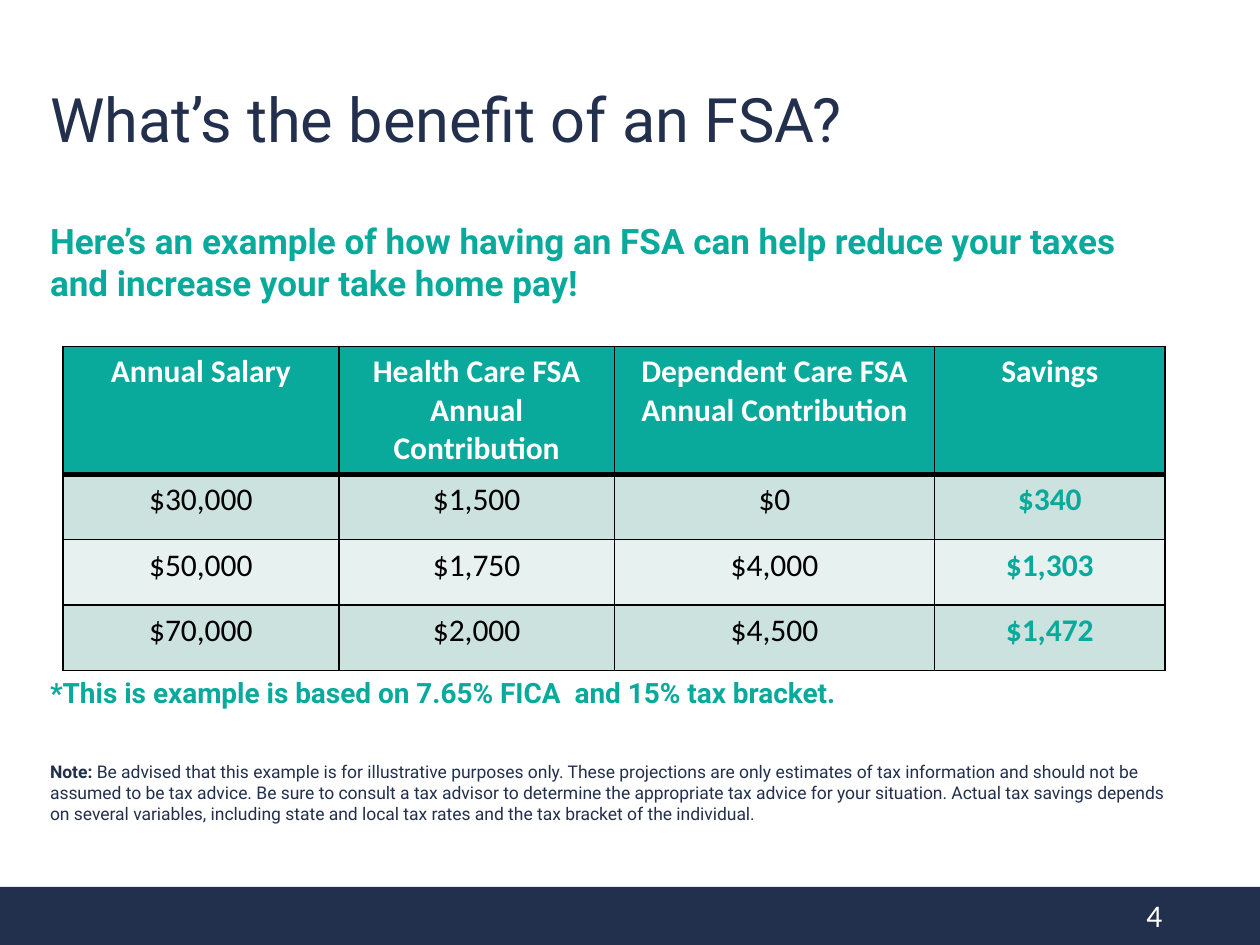
from dataclasses import dataclass

from lxml.etree import SubElement
from pptx import Presentation
from pptx.dml.color import RGBColor
from pptx.enum.shapes import MSO_SHAPE
from pptx.enum.text import PP_ALIGN
from pptx.oxml.ns import qn
from pptx.util import Cm, Pt

COLORS = {
    "navy": "23304D",
    "teal": "09A99C",
    "white": "FFFFFF",
    "black": "000000",
    "band": "CCE2DE",
    "light_band": "E7F1EF",
}


@dataclass(frozen=True)
class Run:
    text: str
    size: float
    color: str
    bold: bool = False
    font: str = "Roboto"


@dataclass(frozen=True)
class TextBlock:
    left: float
    top: float
    width: float
    height: float
    runs: tuple[Run, ...]


TEXT_BLOCKS = (
    TextBlock(0.76, 1.52, 23.32, 1.7, (
        Run("What’s the benefit of an FSA?", 35, "navy"),
    )),
    TextBlock(0.76, 4.3, 23.27, 2, (
        Run("Here’s an example of how having an FSA can help reduce your taxes "
            "and increase your take home pay!", 20, "teal", True),
    )),
    TextBlock(0.76, 13.5, 23.27, 0.95, (
        Run("*This is example is based on 7.65% FICA  and 15% tax bracket.", 16, "teal", True),
    )),
    TextBlock(0.76, 15.22, 23.27, 1.6, (
        Run("Note: ", 10, "navy", True),
        Run("Be advised that this example is for illustrative purposes only. "
            "These projections are only estimates of tax information and should not be "
            "assumed to be tax advice. Be sure to consult a tax advisor to determine the "
            "appropriate tax advice for your situation. Actual tax savings depends on "
            "several variables, including state and local tax rates and the tax bracket "
            "of the individual.", 10, "navy"),
    )),
    TextBlock(22.86, 17.93, 1.27, 1.12, (
        Run("4", 18, "white", font="Calibri"),
    )),
)

SAVINGS_ROWS = (
    ("Annual Salary", "Health Care FSA Annual Contribution",
     "Dependent Care FSA Annual Contribution", "Savings"),
    ("$30,000", "$1,500", "$0", "$340"),
    ("$50,000", "$1,750", "$4,000", "$1,303"),
    ("$70,000", "$2,000", "$4,500", "$1,472"),
)
COLUMN_WIDTHS = (5.56, 5.56, 6.45, 4.65)
ROW_HEIGHTS = (2.58, 1.32, 1.32, 1.32)


def rgb(name: str) -> RGBColor:
    return RGBColor.from_string(COLORS[name])


def add_run(paragraph, run: Run) -> None:
    piece = paragraph.add_run()
    piece.text = run.text
    formats = {"name": run.font, "size": Pt(run.size), "bold": run.bold}
    for attribute, value in formats.items():
        setattr(piece.font, attribute, value)
    piece.font.color.rgb = rgb(run.color)


def add_text(slide, block: TextBlock) -> None:
    box = slide.shapes.add_textbox(
        Cm(block.left), Cm(block.top), Cm(block.width), Cm(block.height))
    box.text_frame.word_wrap = True
    for run in block.runs:
        add_run(box.text_frame.paragraphs[0], run)


def add_footer_bar(slide) -> None:
    bar = slide.shapes.add_shape(MSO_SHAPE.RECTANGLE, 0, Cm(17.88), Cm(25.4), Cm(1.17))
    bar.shadow.inherit = False
    bar.fill.solid()
    bar.fill.fore_color.rgb = rgb("navy")
    bar.line.fill.background()


def set_borders(cell, top: float, bottom: float) -> None:
    properties = cell._tc.get_or_add_tcPr()
    widths = {"lnL": 1, "lnR": 1, "lnT": top, "lnB": bottom}
    for position, (side, width) in enumerate(widths.items()):
        border = SubElement(properties, qn(f"a:{side}"), w=str(Pt(width)))
        fill = SubElement(border, qn("a:solidFill"))
        SubElement(fill, qn("a:srgbClr"), val=COLORS["black"])
        properties.insert(position, border)


def cell_style(row: int, column: int) -> tuple[str, str, bool]:
    if row == 0:
        return "teal", "white", True
    is_savings = column == len(COLUMN_WIDTHS) - 1
    return ("band" if row % 2 else "light_band",
            "teal" if is_savings else "black", is_savings)


def add_savings_table(slide) -> None:
    table = slide.shapes.add_table(
        len(ROW_HEIGHTS), len(COLUMN_WIDTHS), Cm(1.27), Cm(6.98),
        Cm(sum(COLUMN_WIDTHS)), Cm(sum(ROW_HEIGHTS))).table
    for column, width in zip(table.columns, COLUMN_WIDTHS):
        column.width = Cm(width)
    for row, height in zip(table.rows, ROW_HEIGHTS):
        row.height = Cm(height)
    for row_index, values in enumerate(SAVINGS_ROWS):
        for column_index, value in enumerate(values):
            cell = table.cell(row_index, column_index)
            background, color, bold = cell_style(row_index, column_index)
            cell.fill.solid()
            cell.fill.fore_color.rgb = rgb(background)
            paragraph = cell.text_frame.paragraphs[0]
            paragraph.alignment = PP_ALIGN.CENTER
            add_run(paragraph, Run(value, 18, color, bold, "Calibri"))
            set_borders(cell, 3 if row_index == 1 else 1, 3 if row_index == 0 else 1)


def main() -> None:
    presentation = Presentation()
    for attribute, value in {"slide_width": Cm(25.4), "slide_height": Cm(19.05)}.items():
        setattr(presentation, attribute, value)
    slide = presentation.slides.add_slide(presentation.slide_layouts[6])
    add_footer_bar(slide)
    for block in TEXT_BLOCKS:
        add_text(slide, block)
    add_savings_table(slide)
    presentation.save("out.pptx")


if __name__ == "__main__":
    main()
